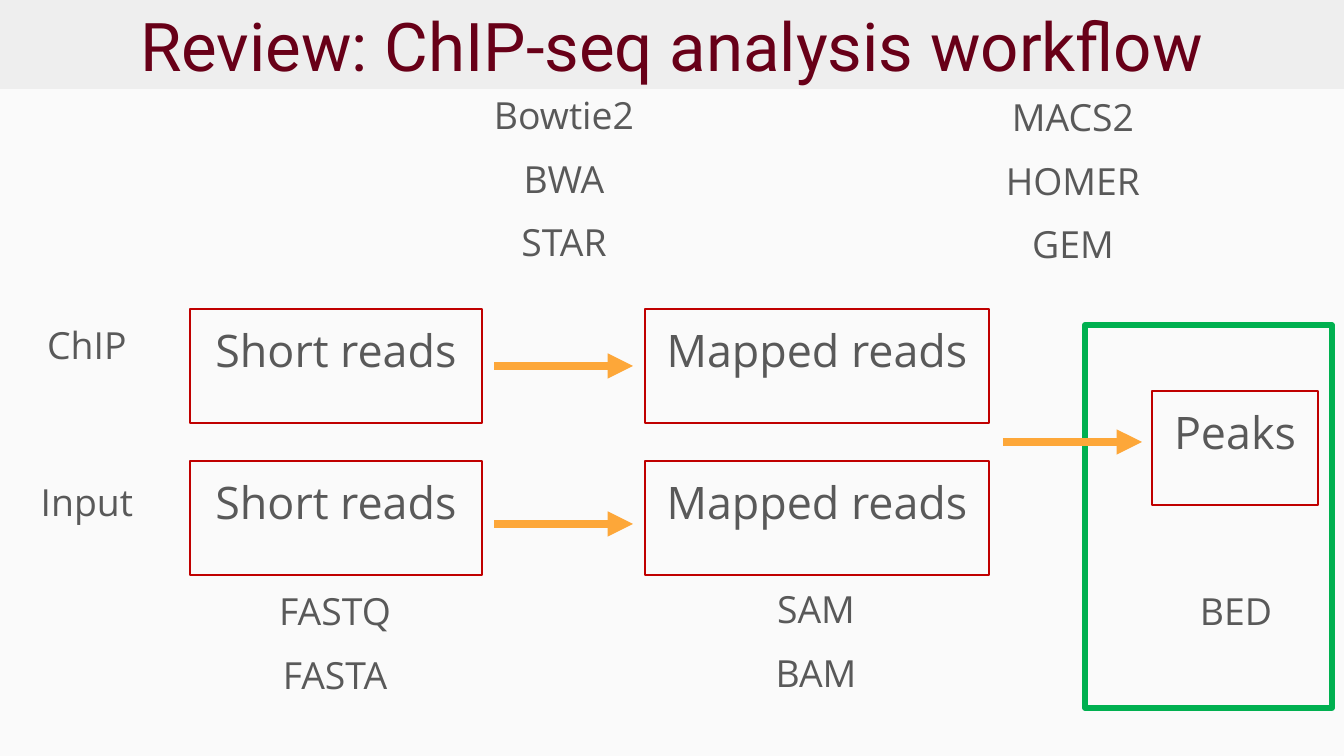
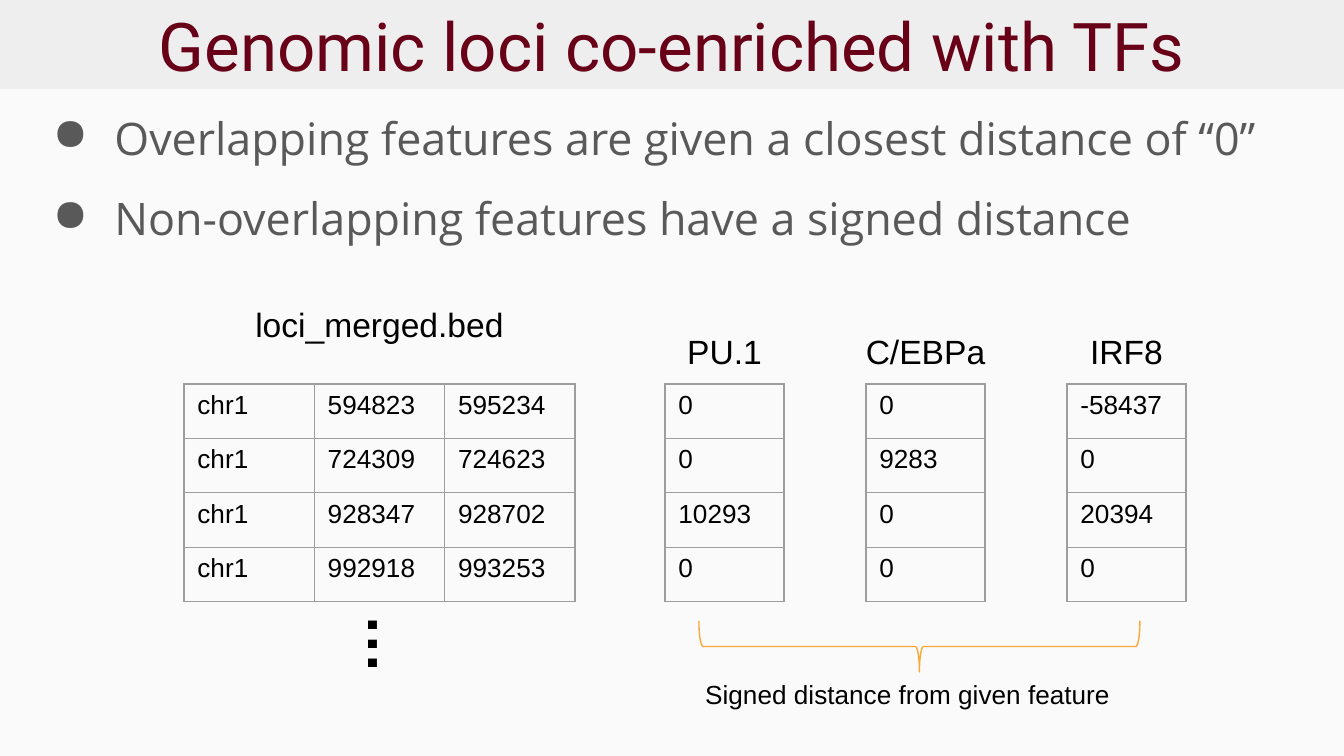
from lxml import etree
from pptx import Presentation
from pptx import util as u
from pptx.dml.color import RGBColor
from pptx.enum import shapes, text
from pptx.oxml import ns

PX = 914400 / 134.4  # EMU in one px
WIDTH, HEIGHT = 1344, 756

PAPER = RGBColor(0xFA, 0xFA, 0xFA)
BAND = RGBColor(0xEE, 0xEE, 0xEE)
MAROON = RGBColor(0x68, 0x00, 0x18)
GREY = RGBColor(0x59, 0x59, 0x59)
RED = RGBColor(0xC0, 0x00, 0x00)
GREEN = RGBColor(0x00, 0xB0, 0x50)
ORANGE = RGBColor(0xFD, 0xA7, 0x39)
BLACK = RGBColor(0x00, 0x00, 0x00)
TABLE_LINE = RGBColor(0x9E, 0x9E, 0x9E)

# Workflow content
WORKFLOW_TITLE = "Review: ChIP-seq analysis workflow"
BOX_HEIGHT = 114
CHIP_TOP, INPUT_TOP, PEAKS_TOP = 309, 461, 391
STAGES = [  # name, left, width, tops
    ("Short reads", 190, 292, (CHIP_TOP, INPUT_TOP)),
    ("Mapped reads", 645, 344, (CHIP_TOP, INPUT_TOP)),
    ("Peaks", 1152, 166, (PEAKS_TOP,)),
]
PEAKS_FRAME = (1085, 325, 247, 383)
ARROW_LENGTH = 139
ARROWS = [(494, 366), (494, 524), (1003, 442)]  # left, middle
LABELS = [  # lines, left, top, width, height
    (["ChIP"], 16, 309, 142, 114),
    (["Input"], 16, 466, 142, 114),
    (["Bowtie2", "BWA", "STAR"], 468, 79, 192, 150),
    (["FASTQ", "FASTA"], 239, 575, 192, 215),
    (["SAM", "BAM"], 720, 573, 192, 215),
    (["MACS2", "HOMER", "GEM"], 977, 81, 192, 215),
    (["BED"], 1140, 575, 192, 215),
]

# Loci content
LOCI_TITLE = "Genomic loci co-enriched with TFs"
BULLETS = [
    "Overlapping features are given a closest distance of “0”",
    "Non-overlapping features have a signed distance",
]
LOCI = [
    ("chr1", "594823", "595234"),
    ("chr1", "724309", "724623"),
    ("chr1", "928347", "928702"),
    ("chr1", "992918", "993253"),
]
DISTANCES = {
    "PU.1": ("0", "0", "10293", "0"),
    "C/EBPa": ("0", "9283", "0", "0"),
    "IRF8": ("-58437", "0", "20394", "0"),
}
TABLE_TOP, TABLE_HEIGHT = 384, 218
LOCI_LEFT, LOCI_WIDTH = 184, 391
DISTANCE_LEFT, DISTANCE_WIDTH, DISTANCE_STEP = 665, 119, 201


def emu(*lengths):
    return [u.Emu(round(length * PX)) for length in lengths]


def write(shape, lines, font, size, color, align=None, before=None, inset=0.05):
    """Fill a shape or cell frame with equally styled paragraphs."""
    frame = shape.text_frame
    frame.text = "\n".join(lines)
    frame.word_wrap = True
    frame.vertical_anchor = text.MSO_ANCHOR.TOP
    frame.margin_left = frame.margin_right = u.Inches(0.1)
    frame.margin_top = frame.margin_bottom = u.Inches(inset)
    for paragraph in frame.paragraphs:
        paragraph.alignment = align
        paragraph.space_before = before
        style_runs(paragraph, font, size, color)
    return frame


def style_runs(paragraph, font, size, color):
    for run in paragraph.runs:
        run.font.name = font
        run.font.size = u.Pt(size)
        run.font.color.rgb = color


def add_text(slide, area, lines, *style, **layout):
    shape = slide.shapes.add_textbox(*emu(*area))
    write(shape, lines, *style, **layout)
    return shape


def add_outline(slide, area, color, weight, kind=shapes.MSO_SHAPE.RECTANGLE):
    shape = slide.shapes.add_shape(kind, *emu(*area))
    shape.shadow.inherit = False
    shape.fill.background()
    shape.line.color.rgb = color
    shape.line.width = u.Pt(weight)
    return shape


def add_slide(presentation):
    slide = presentation.slides.add_slide(presentation.slide_layouts[6])
    slide.background.fill.solid()
    slide.background.fill.fore_color.rgb = PAPER
    return slide


def add_title(slide, title):
    band = slide.shapes.add_shape(
        shapes.MSO_SHAPE.RECTANGLE, *emu(0, 0, WIDTH, 89))
    band.shadow.inherit = False
    band.fill.solid()
    band.fill.fore_color.rgb = BAND
    band.line.fill.background()
    frame = write(band, [title], "Roboto", 36, MAROON,
                  align=text.PP_ALIGN.CENTER, inset=0.1)
    frame.vertical_anchor = text.MSO_ANCHOR.MIDDLE


def add_arrow(slide, left, middle):
    arrow = slide.shapes.add_connector(
        shapes.MSO_CONNECTOR.STRAIGHT,
        *emu(left, middle, left + ARROW_LENGTH, middle))
    arrow.line.color.rgb = ORANGE
    arrow.line.width = u.Pt(4.5)
    etree.SubElement(arrow.line._get_or_add_ln(), ns.qn("a:tailEnd"),
                     type="triangle")
    etree.SubElement(arrow._element.spPr, ns.qn("a:effectLst"))


def add_bullet(paragraph, color):
    properties = paragraph._p.get_or_add_pPr()
    properties.set("marL", str(u.Inches(0.5)))
    properties.set("indent", str(u.Inches(-0.46)))
    bullet_color = etree.SubElement(properties, ns.qn("a:buClr"))
    etree.SubElement(bullet_color, ns.qn("a:srgbClr"), val=str(color))
    etree.SubElement(properties, ns.qn("a:buChar"), char="●")


def add_borders(cell):
    properties = cell._tc.get_or_add_tcPr()
    for side in ("lnL", "lnR", "lnT", "lnB"):
        border = etree.SubElement(properties, ns.qn(f"a:{side}"),
                                  w=str(u.Pt(0.75)))
        fill = etree.SubElement(border, ns.qn("a:solidFill"))
        etree.SubElement(fill, ns.qn("a:srgbClr"), val=str(TABLE_LINE))


def add_grid(slide, left, width, rows):
    table = slide.shapes.add_table(
        len(rows), len(rows[0]),
        *emu(left, TABLE_TOP, width, TABLE_HEIGHT)).table
    table.first_row = table.horz_banding = False
    for row, values in zip(table.rows, rows):
        row.height = emu(TABLE_HEIGHT / len(rows))[0]
        for cell, value in zip(row.cells, values):
            cell.text = value
            style_runs(cell.text_frame.paragraphs[0], "Arial", 14, BLACK)
            add_borders(cell)
            cell.fill.background()


def add_heading(slide, heading, center, top, width):
    add_text(slide, (center - width / 2, top, width, 54), [heading],
             "Arial", 18, BLACK, align=text.PP_ALIGN.CENTER)


def build_workflow(presentation):
    slide = add_slide(presentation)
    layout = {"align": text.PP_ALIGN.CENTER, "before": u.Pt(10), "inset": 0.1}
    add_outline(slide, PEAKS_FRAME, GREEN, 3)
    add_title(slide, WORKFLOW_TITLE)
    for name, left, width, tops in STAGES:
        for top in tops:
            box = add_outline(slide, (left, top, width, BOX_HEIGHT), RED, 0.75)
            write(box, [name], "Open Sans", 24, GREY, **layout)
    for left, middle in ARROWS:
        add_arrow(slide, left, middle)
    for lines, *area in LABELS:
        add_text(slide, area, lines, "Open Sans", 20, GREY, **layout)


def build_loci(presentation):
    slide = add_slide(presentation)
    add_title(slide, LOCI_TITLE)
    body = add_text(slide, (34, 89, 1277, 194), BULLETS, "Open Sans", 24, GREY,
                    before=u.Pt(10), inset=0.1)
    for paragraph in body.text_frame.paragraphs:
        paragraph.line_spacing = 1.15
        add_bullet(paragraph, GREY)

    # Merged loci, continued by a vertical ellipsis
    add_grid(slide, LOCI_LEFT, LOCI_WIDTH, LOCI)
    add_heading(slide, "loci_merged.bed", LOCI_LEFT + LOCI_WIDTH / 2, 297, 343)
    ellipsis = add_text(slide, (347, 603, 89, 86), ["…"], "Arial", 32, BLACK)
    ellipsis.rotation = 90
    ellipsis.text_frame.paragraphs[0].runs[0].font.bold = True

    # One distance column per factor
    for index, (factor, values) in enumerate(DISTANCES.items()):
        left = DISTANCE_LEFT + index * DISTANCE_STEP
        add_grid(slide, left, DISTANCE_WIDTH, [(value,) for value in values])
        add_heading(slide, factor, left + DISTANCE_WIDTH / 2, 324, 152)
    brace = add_outline(slide, (894, 426, 51, 441), ORANGE, 0.75,
                        shapes.MSO_SHAPE.LEFT_BRACE)
    brace.adjustments[0] = 0.08
    brace.rotation = 270
    add_text(slide, (692, 672, 454, 46), ["Signed distance from given feature"],
             "Arial", 14, BLACK)


def main():
    presentation = Presentation()
    presentation.slide_width, presentation.slide_height = emu(WIDTH, HEIGHT)
    build_workflow(presentation)
    build_loci(presentation)
    presentation.save("out.pptx")


if __name__ == "__main__":
    main()
